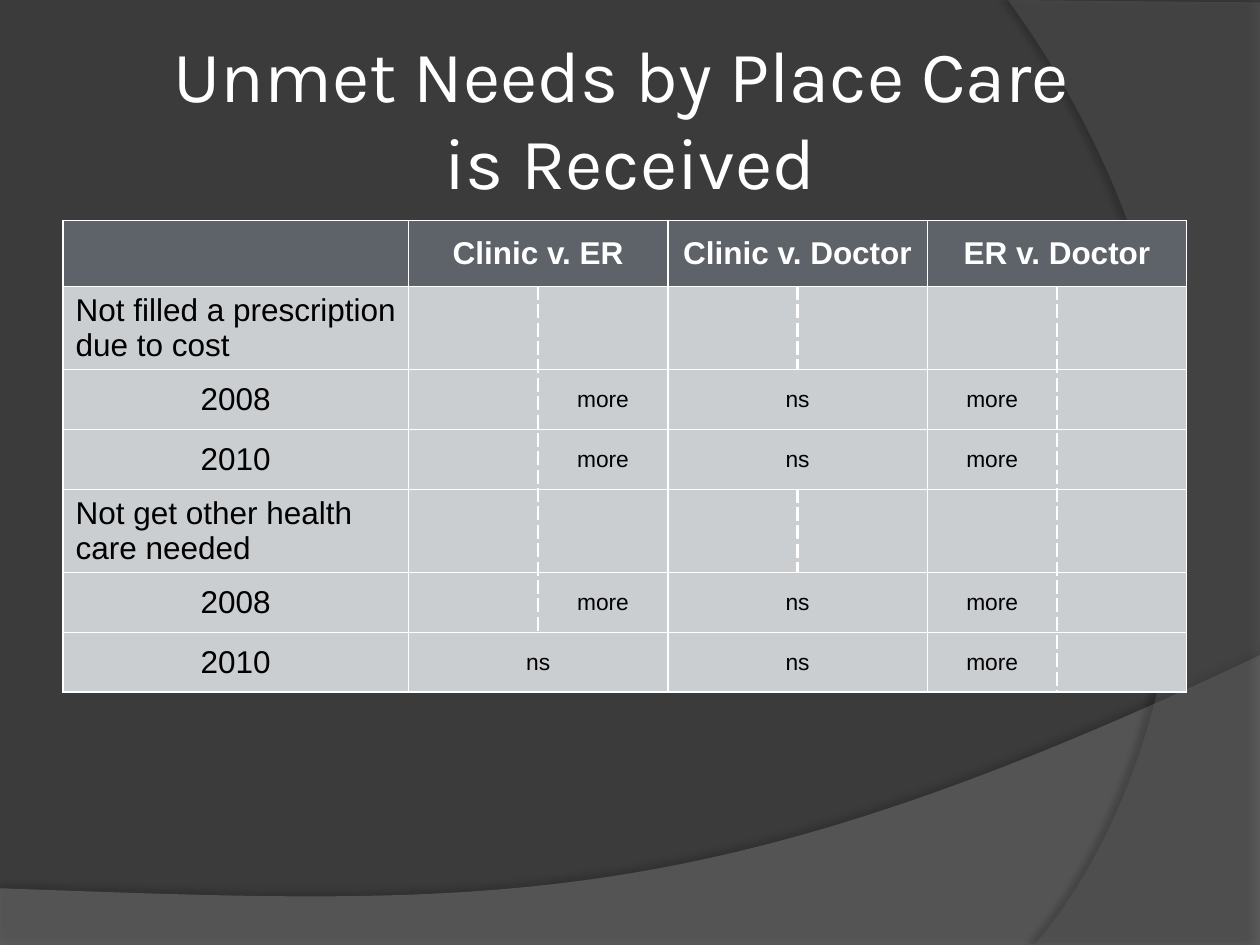
from lxml import etree
from pptx import Presentation
from pptx.dml.color import RGBColor
from pptx.enum import text as t
from pptx.oxml import parse_xml
from pptx.oxml.ns import nsdecls, qn
from pptx.util import Pt

COLORS = {
    "background": "3B3B3B", "wave": "7F7F7F", "arc": "5E5E5E", "shadow": "000000",
    "header": "5E636A", "body": "CBCED1", "light": "FFFFFF", "dark": "000000",
}
HEADERS = ["Clinic v. ER", "Clinic v. Doctor", "ER v. Doctor"]
# Each comparison is a pair of half cells; a single string spans both halves.
BLANK, FIRST, SECOND, SAME = ("", ""), ("more", ""), ("", "more"), "ns"
ROWS = [
    ("Not filled a prescription due to cost", [BLANK, BLANK, BLANK]),
    ("2008", [SECOND, SAME, FIRST]),
    ("2010", [SECOND, SAME, FIRST]),
    ("Not get other health care needed", [BLANK, BLANK, BLANK]),
    ("2008", [SECOND, SAME, FIRST]),
    ("2010", [SAME, SAME, FIRST]),
]


def rgb(name):
    return RGBColor.from_string(COLORS[name])


def write(frame, words, size=18, font="Arial", color="dark", bold=False, centered=True):
    paragraph = frame.paragraphs[0]
    paragraph.text = words
    paragraph.alignment = t.PP_ALIGN.CENTER if centered else t.PP_ALIGN.LEFT
    for run in paragraph.runs:
        run.font.size, run.font.name, run.font.bold = Pt(size), font, bold
        run.font.color.rgb = rgb(color)


def bend_first_side(swoosh, controls):
    """Turn the first straight side into a cubic curve with these control points."""
    side = swoosh._element.find(".//" + qn("a:lnTo"))
    side.tag = qn("a:cubicBezTo")
    for index, (x, y) in enumerate(controls):
        point = etree.Element(qn("a:pt"), x=str(Pt(x)), y=str(Pt(y)))
        side.insert(index, point)


def add_swoosh(slide, left, top, corners, controls, color, opacity, shadow):
    """Translucent outline, with shadow as (opacity, blur, distance, degrees)."""
    points = [(Pt(left + x), Pt(top + y)) for x, y in corners]
    builder = slide.shapes.build_freeform(*points[0])
    builder.add_line_segments(points[1:], close=True)
    swoosh = builder.convert_to_shape()
    swoosh.fill.solid()
    swoosh.fill.fore_color.rgb = rgb(color)
    swoosh.line.fill.background()
    properties = swoosh._element.spPr
    tint = properties.find(qn("a:solidFill"))[0]
    etree.SubElement(tint, qn("a:alpha"), val=str(opacity * 1000))
    strength, blur, distance, degrees = shadow
    properties.append(parse_xml(
        f'<a:effectLst {nsdecls("a")}><a:outerShdw blurRad="{Pt(blur)}" '
        f'dist="{Pt(distance)}" dir="{degrees * 60000}" rotWithShape="0">'
        f'<a:srgbClr val="{COLORS["shadow"]}"><a:alpha val="{strength * 1000}"/>'
        '</a:srgbClr></a:outerShdw></a:effectLst>'))
    bend_first_side(swoosh, controls)


def add_wave(slide, left, top, width, height):
    corners = [(width, 0), (0, 133.2), (0, height), (width, height)]
    add_swoosh(slide, left, top, corners, [(402.5, 150.5), (281.5, 143.3)],
               "wave", 45, (35, 4, 3.5, 270))


def add_arc(slide, left, top, width, height):
    corners = [(15, height), (0, 0), (width, 1.4), (width, height)]
    add_swoosh(slide, left, top, corners, [(97.2, 445.7), (157, 216)],
               "arc", 40, (45, 4, 4, 180))


def add_title(slide, left, top, width, height):
    frame = slide.shapes.add_textbox(Pt(left), Pt(top), Pt(width), Pt(height)).text_frame
    frame.word_wrap = True
    frame.vertical_anchor = t.MSO_ANCHOR.MIDDLE
    frame.margin_left = frame.margin_right = Pt(3.6)
    frame.margin_top = frame.margin_bottom = Pt(3.6)
    write(frame, "Unmet Needs by Place Care \vis Received",
          size=41.4, font="Karla", color="light")


def style_cell(cell, fill, dashed_side=None):
    for side in "LRTB":
        dashed = side == dashed_side
        cell._tc.get_or_add_tcPr().append(parse_xml(
            f'<a:ln{side} {nsdecls("a")} w="{Pt(1.5 if dashed else 1)}"><a:solidFill>'
            f'<a:srgbClr val="{COLORS["light"]}"/></a:solidFill>'
            f'<a:prstDash val="{"sysDash" if dashed else "solid"}"/></a:ln{side}>'))
    cell.fill.solid()
    cell.fill.fore_color.rgb = rgb(fill)
    cell.vertical_anchor = t.MSO_ANCHOR.MIDDLE
    cell.margin_top = cell.margin_bottom = Pt(2)


def add_comparison(table, row, pair, content, fill="body", **text_format):
    halves = [table.cell(row, 1 + 2 * pair + half) for half in (0, 1)]
    spanning = isinstance(content, str)
    for half, dashed_side in zip(halves, "RL"):
        style_cell(half, fill, None if spanning else dashed_side)
    if spanning:
        halves[0].merge(halves[1])
        content = (content,)
    for half, words in zip(halves, content):
        if words:
            write(half.text_frame, words, **text_format)


def add_label(cell, label):
    style_cell(cell, "body")
    is_year = label.isdigit()
    if not is_year:
        cell.margin_right = Pt(4)
    write(cell.text_frame, label, centered=is_year)


def add_needs_table(slide, left, top, width, label_width=197.4):
    heights = [37.8] + [34.25 if label.isdigit() else 47.4 for label, _ in ROWS]
    columns = 1 + 2 * len(HEADERS)
    table = slide.shapes.add_table(len(heights), columns, Pt(left), Pt(top),
                                   Pt(width), Pt(sum(heights))).table
    table.horz_banding = False
    for row, height in zip(table.rows, heights):
        row.height = Pt(height)
    for column in table.columns:
        column.width = Pt((width - label_width) / (columns - 1))
    table.columns[0].width = Pt(label_width)

    style_cell(table.cell(0, 0), "header")
    for pair, header in enumerate(HEADERS):
        add_comparison(table, 0, pair, header, "header", color="light", bold=True)
    for row, (label, comparisons) in enumerate(ROWS, start=1):
        add_label(table.cell(row, 0), label)
        for pair, content in enumerate(comparisons):
            add_comparison(table, row, pair, content, size=13)


def main():
    deck = Presentation()
    deck.slide_width, deck.slide_height = Pt(720), Pt(540)
    slide = deck.slides.add_slide(deck.slide_layouts[6])
    slide.background.fill.solid()
    slide.background.fill.fore_color.rgb = rgb("background")
    add_wave(slide, 0, 374.4, 720, 165.6)
    add_arc(slide, 576, 0, 144, 540)
    add_title(slide, 0, 21.6, 720, 90)
    add_needs_table(slide, 36, 126, 642.3)
    deck.save("out.pptx")


if __name__ == "__main__":
    main()
